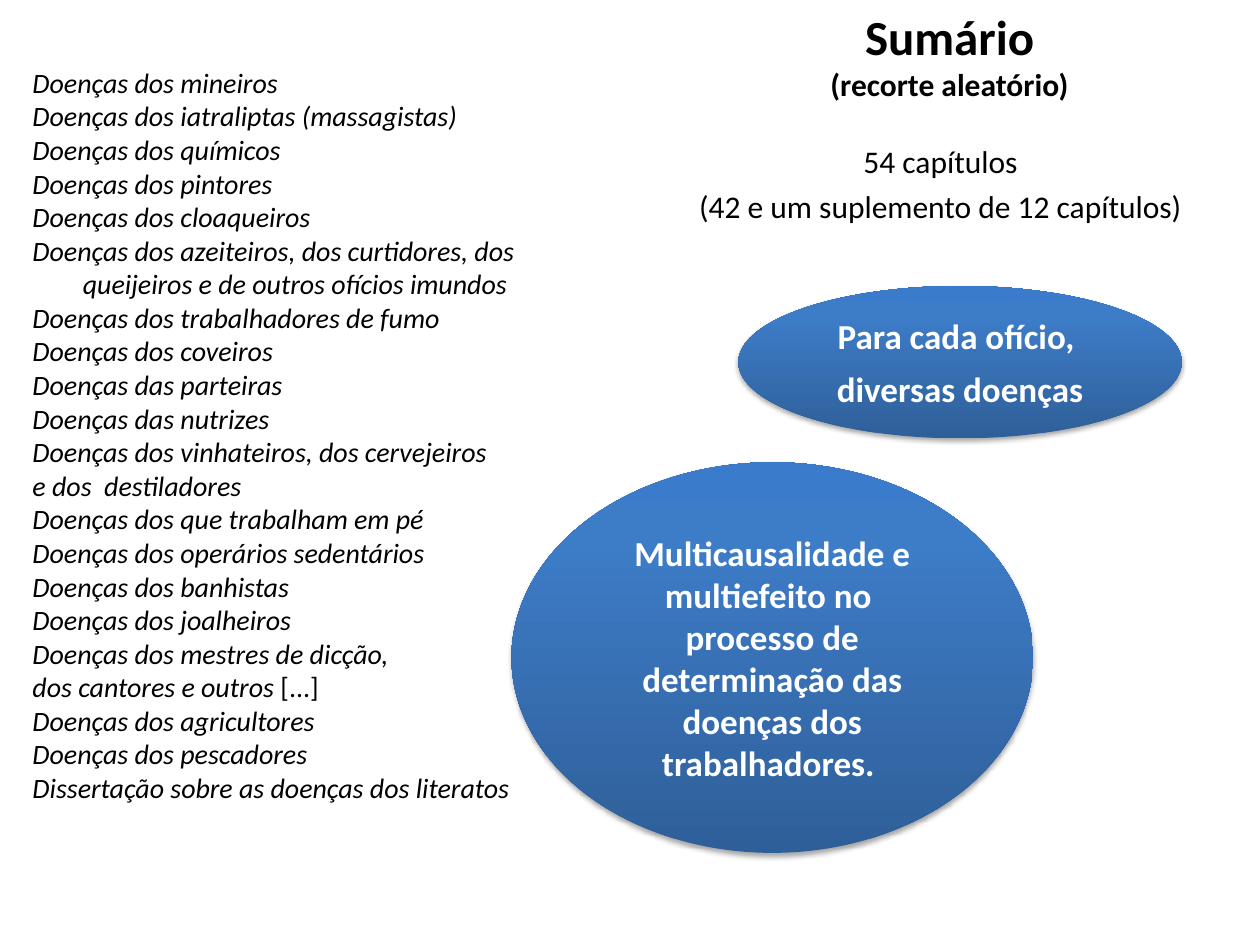
from lxml.etree import SubElement
from pptx import Presentation
from pptx.dml.color import RGBColor
from pptx.enum.shapes import MSO_SHAPE
from pptx.enum.text import MSO_ANCHOR, MSO_AUTO_SIZE, PP_ALIGN
from pptx.oxml import parse_xml
from pptx.oxml.ns import nsdecls, qn
from pptx.util import Pt

HUES = {"text": "000000", "light": "FFFFFF", "base": "2F5F99",
        "mid": "3D7CC7", "top": "3A7CCB", "shade": "000000"}
STOPS = [(0, "base"), (80, "mid"), (100, "top")]
INDENT = 28.8
ROMAN = "[...]"
TRADES = [
    "Doenças dos mineiros",
    "Doenças dos iatraliptas (massagistas)",
    "Doenças dos químicos",
    "Doenças dos pintores",
    "Doenças dos cloaqueiros",
    "Doenças dos azeiteiros, dos curtidores, dos",
    "queijeiros e de outros ofícios imundos",
    "Doenças dos trabalhadores de fumo",
    "Doenças dos coveiros",
    "Doenças das parteiras",
    "Doenças das nutrizes",
    "Doenças dos vinhateiros, dos cervejeiros",
    "e dos  destiladores",
    "Doenças dos que trabalham em pé",
    "Doenças dos operários sedentários",
    "Doenças dos banhistas",
    "Doenças dos joalheiros",
    "Doenças dos mestres de dicção,",
    "dos cantores e outros [...]",
    "Doenças dos agricultores",
    "Doenças dos pescadores",
    "Dissertação sobre as doenças dos literatos",
]


def write(frame, lines, sizes, hue="text", bold=False, italic=False,
          align=PP_ALIGN.CENTER, after=0, space=1.0, wrap=True,
          anchor=MSO_ANCHOR.TOP):
    """Fill a frame, one paragraph a line; the last size serves the rest."""
    frame.word_wrap = wrap
    frame.auto_size = MSO_AUTO_SIZE.NONE
    frame.vertical_anchor = anchor
    for i, line in enumerate(lines):
        para = frame.add_paragraph() if i else frame.paragraphs[0]
        para.alignment = align
        para.space_after = Pt(after)
        para.line_spacing = space
        head, mark, _ = line.partition(ROMAN)
        for part in filter(None, (head, mark)):
            run = para.add_run()
            run.text = part
            font = run.font
            font.name = "Calibri"
            font.size = Pt(sizes[min(i, len(sizes) - 1)])
            font.bold = bold
            font.italic = italic and part != ROMAN
            font.color.rgb = RGBColor.from_string(HUES[hue])
    return frame


def add_box(slide, x, y, w, h, lines, sizes, **style):
    box = slide.shapes.add_textbox(Pt(x), Pt(y), Pt(w), Pt(h))
    return write(box.text_frame, lines, sizes, **style)


def add_title(slide, x, y, w, h, lines, sizes):
    title = slide.shapes.title
    title.left, title.top, title.width, title.height = map(Pt, (x, y, w, h))
    write(title.text_frame, lines, sizes, bold=True, wrap=False)


def shade(shape):
    """Give the shape its gradient and soft shadow."""
    stops = "".join(f'<a:gs pos="{pos * 1000}"><a:srgbClr val="{HUES[hue]}"/></a:gs>'
                    for pos, hue in STOPS)
    fill = parse_xml(f'<a:gradFill {nsdecls("a")} rotWithShape="1"><a:gsLst>{stops}'
                     '</a:gsLst><a:lin ang="16200000" scaled="0"/></a:gradFill>')
    shape.line.fill.background()
    shape.shadow.inherit = False
    props = shape.element.spPr
    props.find(qn("a:prstGeom")).addnext(fill)
    glow = SubElement(props.find(qn("a:effectLst")), qn("a:outerShdw"),
                      blurRad=str(Pt(3.1)), dist=str(Pt(1.8)),
                      dir="5400000", rotWithShape="0")
    tint = SubElement(glow, qn("a:srgbClr"), val=HUES["shade"])
    SubElement(tint, qn("a:alpha"), val="35000")


def add_oval(slide, x, y, w, h, lines, after=0):
    oval = slide.shapes.add_shape(MSO_SHAPE.OVAL, Pt(x), Pt(y), Pt(w), Pt(h))
    shade(oval)
    write(oval.text_frame, lines, [20], hue="light", bold=True, after=after,
          anchor=MSO_ANCHOR.MIDDLE)


def main():
    deck = Presentation()
    deck.slide_width, deck.slide_height = Pt(720), Pt(540)
    slide = deck.slides.add_slide(deck.slide_layouts[5])
    add_oval(slide, 421.9, 163.4, 253.4, 87.1,
             ["Para cada ofício, ", "diversas doenças"], after=6)
    add_title(slide, 466.6, 0, 152, 63.4,
              ["Sumário", "(recorte aleatório)"], [28, 18])
    trades = add_box(slide, 11.5, 33.8, 348.5, 433.4, TRADES, [16],
                     italic=True, align=PP_ALIGN.LEFT)
    for para in trades.paragraphs:
        if para.text.startswith("queijeiros"):
            para._p.get_or_add_pPr().set("marL", str(Pt(INDENT)))
    add_oval(slide, 292.3, 264.2, 298.1, 223.2,
             ["Multicausalidade e multiefeito no ",
              "processo de determinação das doenças dos trabalhadores. "])
    add_box(slide, 371.5, 73.4, 331.9, 59.8,
            ["54 capítulos", "(42 e um suplemento de 12 capítulos)"], [18], space=1.2)
    deck.save("out.pptx")


if __name__ == "__main__":
    main()
